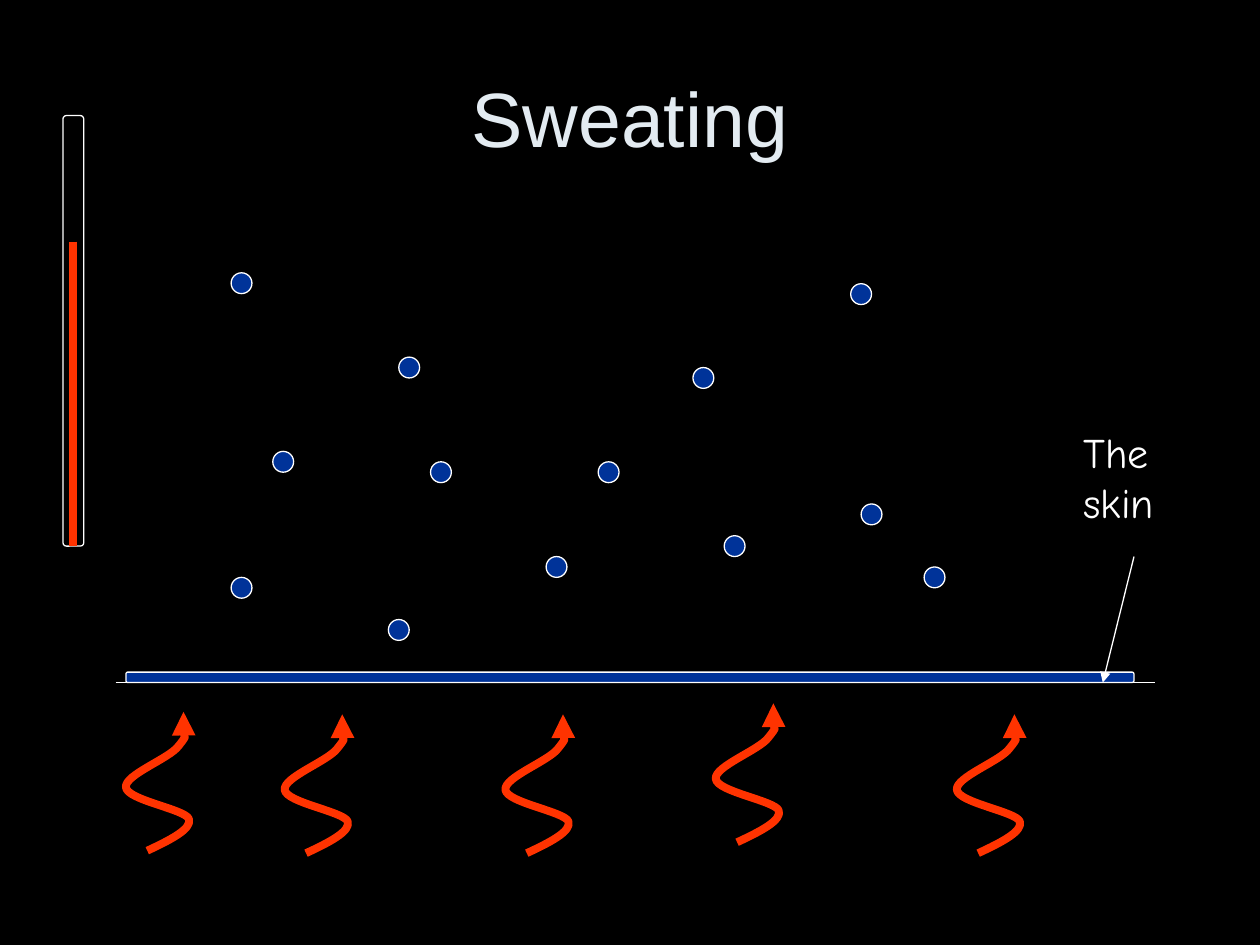
from lxml import etree
from pptx import Presentation
from pptx.dml.color import RGBColor
from pptx.enum.shapes import MSO_CONNECTOR, MSO_SHAPE
from pptx.enum.text import MSO_ANCHOR, MSO_AUTO_SIZE, PP_ALIGN
from pptx.oxml.ns import qn
from pptx.util import Cm, Pt

STRAIGHT = MSO_CONNECTOR.STRAIGHT
OVAL, ROUNDED = MSO_SHAPE.OVAL, MSO_SHAPE.ROUNDED_RECTANGLE
MIDDLE, CENTER = MSO_ANCHOR.MIDDLE, PP_ALIGN.CENTER
GROW = MSO_AUTO_SIZE.SHAPE_TO_FIT_TEXT
TITLE_ONLY = 5

BLACK, WHITE, PALE = "000000", "FFFFFF", "E3EBF1"
WATER, HEAT = "003399", "FF3300"
THIN, THICK = 0.75, 4.5

# Start point, then three Bezier points per curve, in cm from the wave's corner
WAVE = [(0.46, 2.8),
        (0.91, 2.59), (1.37, 2.36), (1.3, 2.16),
        (1.22, 1.96), (0.05, 1.78), (0.03, 1.52),
        (0, 1.27), (0.91, 0.94), (1.09, 0.69),
        (1.3, 0.43), (1.17, 0.13), (1.19, 0)]
WAVE_CORNERS = [(2.51, 14.35), (5.71, 14.4), (10.16, 14.4),
                (14.4, 14.18), (19.26, 14.4)]

DROP_SIZE = 0.42
DROP_CORNERS = [(4.66, 11.64), (7.83, 12.49), (4.66, 5.5), (17.15, 5.72),
                (14.6, 10.8), (8.04, 7.2), (5.5, 9.1), (11.01, 11.22),
                (18.63, 11.43), (8.68, 9.31), (12.06, 9.31), (13.97, 7.41),
                (17.36, 10.16)]


def rgb(hex_string):
    return RGBColor.from_string(hex_string)


class Diagram:
    def __init__(self, slide):
        self.slide = slide
        self.shapes = slide.shapes
        background = slide.background.fill
        background.solid()
        background.fore_color.rgb = rgb(BLACK)

    def group(self):
        return self.shapes.add_group_shape().shapes

    def outline(self, item, color, width, arrow=False):
        item.line.color.rgb = rgb(color)
        item.line.width = Pt(width)
        if arrow:
            ln = item.line._get_or_add_ln()
            etree.SubElement(ln, qn("a:tailEnd"), type="triangle")

    def style_text(self, frame, text, size, font, color):
        frame.text = text
        frame.word_wrap = True
        run_font = frame.paragraphs[0].runs[0].font
        run_font.size, run_font.name = Pt(size), font
        run_font.color.rgb = rgb(color)

    def title(self, text, left, top, width, height):
        title = self.shapes.title
        title.left, title.top = Cm(left), Cm(top)
        title.width, title.height = Cm(width), Cm(height)
        self.style_text(title.text_frame, text, 44, "Arial", PALE)
        title.text_frame.vertical_anchor = MIDDLE
        title.text_frame.paragraphs[0].alignment = CENTER

    def label(self, text, left, top, width, height):
        box = self.shapes.add_textbox(Cm(left), Cm(top), Cm(width), Cm(height))
        self.style_text(box.text_frame, text, 24, "Comic Neue", WHITE)
        box.text_frame.auto_size = GROW

    def shape(self, kind, left, top, width, height, fill=None, parent=None):
        shape = (parent or self.shapes).add_shape(
            kind, Cm(left), Cm(top), Cm(width), Cm(height))
        shape.shadow.inherit = False
        if fill:
            shape.fill.solid()
            shape.fill.fore_color.rgb = rgb(fill)
        else:
            shape.fill.background()
        self.outline(shape, WHITE, THIN)

    def line(self, x1, y1, x2, y2, color=WHITE, width=THIN, arrow=False):
        line = self.shapes.add_connector(
            STRAIGHT, Cm(x1), Cm(y1), Cm(x2), Cm(y2))
        self.outline(line, color, width, arrow)
        etree.SubElement(line._element.spPr, qn("a:effectLst"))

    def heat_wave(self, left, top, parent):
        points = [(Cm(left + x), Cm(top + y)) for x, y in WAVE]
        builder = parent.build_freeform(*points[0])
        builder.add_line_segments(points[1:], close=False)
        wave = builder.convert_to_shape()
        wave.shadow.inherit = False
        wave.fill.background()
        self.outline(wave, HEAT, THICK, arrow=True)
        # Every three straight segments become one Bezier curve
        segments = list(wave._element.iter(qn("a:lnTo")))
        for first in range(0, len(segments), 3):
            curve = etree.SubElement(segments[first].getparent(),
                                     qn("a:cubicBezTo"))
            for segment in segments[first:first + 3]:
                curve.append(segment[0])
                segment.getparent().remove(segment)


def main():
    prs = Presentation()
    prs.slide_width, prs.slide_height = Cm(25.4), Cm(19.05)
    diagram = Diagram(prs.slides.add_slide(prs.slide_layouts[TITLE_ONLY]))

    diagram.title("Sweating", 1.27, 0.76, 22.86, 3.18)

    # Skin surface with its film of sweat
    diagram.line(2.33, 13.76, 23.28, 13.76)
    diagram.shape(ROUNDED, 2.54, 13.55, 20.32, 0.21, fill=WATER)

    # Thermometer, its mercury in a lower and an upper part
    diagram.shape(ROUNDED, 1.27, 2.33, 0.42, 8.68)
    diagram.line(1.48, 7.83, 1.48, 11.01, HEAT, THICK)
    diagram.line(1.48, 4.87, 1.48, 7.87, HEAT, THICK)

    # Heat rising from the body
    heat = diagram.group()
    for left, top in WAVE_CORNERS:
        diagram.heat_wave(left, top, heat)

    # Evaporating water
    vapour = diagram.group()
    for left, top in DROP_CORNERS:
        diagram.shape(OVAL, left, top, DROP_SIZE, DROP_SIZE, WATER, vapour)

    # Skin label and pointer
    diagram.label("The skin", 21.59, 8.47, 3.39, 2.29)
    diagram.line(22.86, 11.22, 22.23, 13.76, arrow=True)

    prs.save("out.pptx")


if __name__ == "__main__":
    main()
